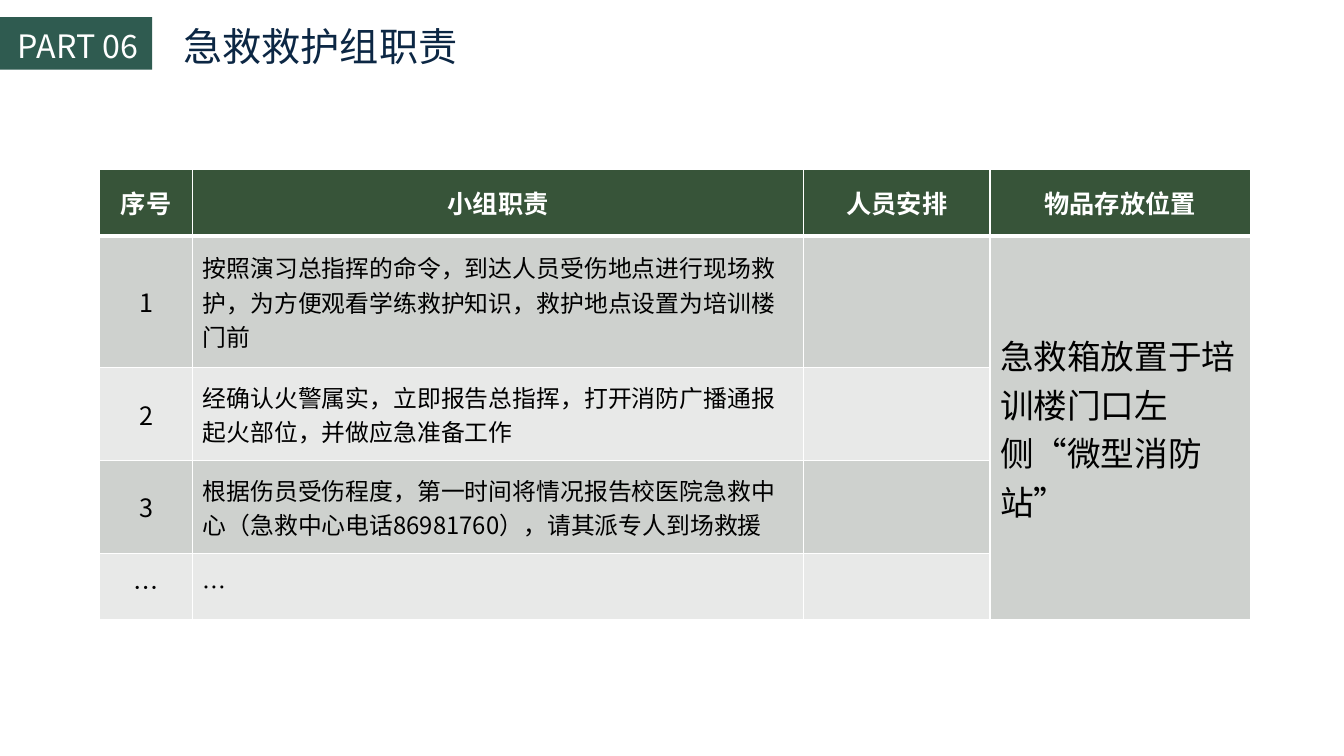
from lxml import etree
from pptx import Presentation
from pptx.dml.color import RGBColor
from pptx.enum import shapes, text
from pptx.oxml import ns
from pptx import util as u

WHITE = RGBColor(0xFF, 0xFF, 0xFF)
BLACK = RGBColor(0, 0, 0)
NAVY = RGBColor(0x0C, 0x27, 0x44)
TEAL = RGBColor(0x2F, 0x5B, 0x50)
HEADER_GREEN = RGBColor(0x37, 0x54, 0x39)
DARK_BAND = RGBColor(0xCE, 0xD1, 0xCE)
LIGHT_BAND = RGBColor(0xE8, 0xE9, 0xE8)

COLUMN_WIDTHS = [0.92, 6.06, 1.85, 2.58]
ROW_HEIGHTS = [0.66, 1.31, 0.92, 0.92, 0.66]
ROWS = [
    ["序号", "小组职责", "人员安排", "物品存放位置"],
    ["1", "按照演习总指挥的命令，到达人员受伤地点进行现场救护，为方便观看学练救护知识，"
     "救护地点设置为培训楼门前", "", "急救箱放置于培训楼门口左侧“微型消防站”"],
    ["2", "经确认火警属实，立即报告总指挥，打开消防广播通报起火部位，并做应急准备工作", "", ""],
    ["3", "根据伤员受伤程度，第一时间将情况报告校医院急救中心（急救中心电话86981760），"
     "请其派专人到场救援", "", ""],
    ["…", "…", "", ""],
]
BODY_SIZES = [18, 17, 18, 24]


class SlideBuilder:
    font = "Noto Sans CJK SC"

    def __init__(self, slide):
        self.slide = slide

    def set_text(self, frame, words, color, size, bold=False, align=None):
        para = frame.paragraphs[0]
        para.alignment = align
        span = para.add_run()
        span.text = words
        values = {"name": self.font, "size": u.Pt(size), "bold": bold}
        for key, value in values.items():
            setattr(span.font, key, value)
        span.font.color.rgb = color
        # East Asian typeface
        properties = span._r.get_or_add_rPr()
        etree.SubElement(properties, ns.qn("a:ea"), typeface=self.font)

    def label(self, left, top, width, height, words, color, size):
        box = self.slide.shapes.add_textbox(*map(u.Inches, (left, top, width, height)))
        frame = box.text_frame
        frame.word_wrap = False
        frame.auto_size = text.MSO_AUTO_SIZE.SHAPE_TO_FIT_TEXT
        self.set_text(frame, words, color, size)

    def bar(self, left, top, width, height, color):
        bar = self.slide.shapes.add_shape(
            shapes.MSO_SHAPE.RECTANGLE, *map(u.Inches, (left, top, width, height)))
        bar.shadow.inherit = False
        bar.fill.solid()
        bar.fill.fore_color.rgb = color
        bar.line.fill.background()

    def borders(self, cell, bottom, top):
        properties = cell._tc.get_or_add_tcPr()
        widths = {"lnL": 1, "lnR": 1, "lnT": top, "lnB": bottom}
        for index, (side, points) in enumerate(widths.items()):
            line = etree.Element(ns.qn(f"a:{side}"), w=str(int(u.Pt(points))))
            fill = etree.SubElement(line, ns.qn("a:solidFill"))
            etree.SubElement(fill, ns.qn("a:srgbClr"), val=str(WHITE))
            properties.insert(index, line)

    def table(self, left, top, rows, widths, heights):
        size = (left, top, sum(widths), sum(heights))
        table = self.slide.shapes.add_table(
            len(rows), len(widths), *map(u.Inches, size)).table
        for column, width in zip(table.columns, widths):
            column.width = u.Inches(width)
        for row, height in zip(table.rows, heights):
            row.height = u.Inches(height)

        # One storage location serves every duty
        table.cell(1, 3).merge(table.cell(len(rows) - 1, 3))

        for r, row in enumerate(rows):
            header = r == 0
            band = HEADER_GREEN if header else DARK_BAND if r % 2 else LIGHT_BAND
            for c, words in enumerate(row):
                cell = table.cell(r, c)
                cell.vertical_anchor = text.MSO_ANCHOR.MIDDLE
                cell.fill.solid()
                cell.fill.fore_color.rgb = band
                self.borders(cell, bottom=3 if header else 1, top=3 if r == 1 else 1)
                if words:
                    centred = header or c == 0
                    self.set_text(cell.text_frame, words,
                                  WHITE if header else BLACK,
                                  18 if header else BODY_SIZES[c], header,
                                  text.PP_ALIGN.CENTER if centred else text.PP_ALIGN.LEFT)


def main():
    deck = Presentation()
    deck.slide_width = u.Inches(13.33)
    deck.slide_height = u.Inches(7.5)
    page = SlideBuilder(deck.slides.add_slide(deck.slide_layouts[6]))

    # Duties table
    page.table(0.99, 1.68, ROWS, COLUMN_WIDTHS, ROW_HEIGHTS)

    # Title and part number
    page.label(1.72, 0.17, 2.94, 0.57, "急救救护组职责", NAVY, 28)
    page.bar(0, 0.17, 1.51, 0.52, TEAL)
    page.label(0.08, 0.21, 1.45, 0.48, "PART 06", WHITE, 23)

    deck.save("out.pptx")


if __name__ == "__main__":
    main()
